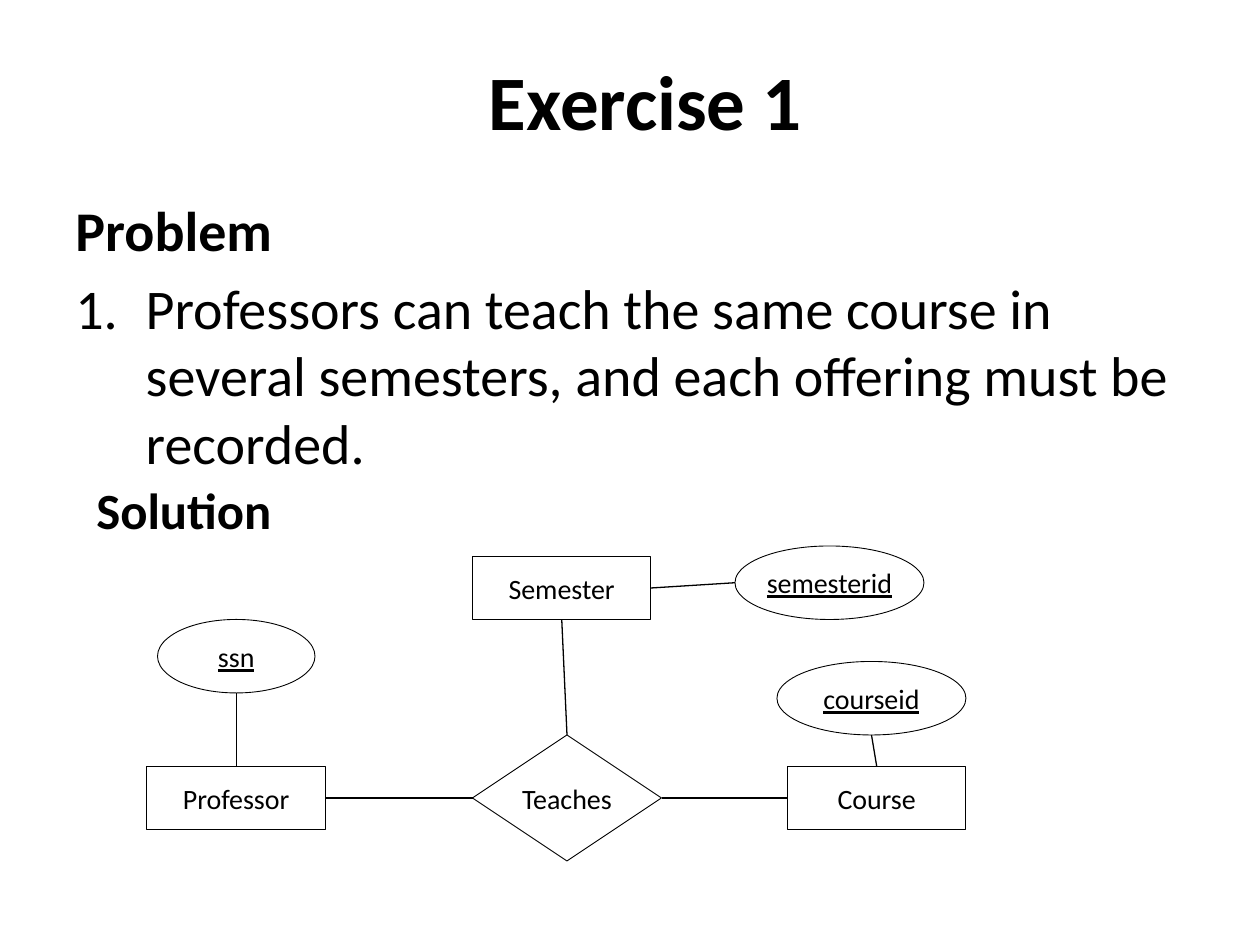
from lxml import etree
from pptx import Presentation
from pptx.dml.color import RGBColor
from pptx.enum.shapes import MSO_CONNECTOR, MSO_SHAPE
from pptx.enum.text import MSO_ANCHOR, PP_ALIGN
from pptx.oxml.ns import qn
from pptx.util import Pt

PX = 7620  # EMU per px, 120 px to the inch
COLORS = {"ink": "000000", "paper": "FFFFFF"}
SIDES = {"top": (0.5, 0), "left": (0, 0.5), "bottom": (0.5, 1), "right": (1, 0.5)}


class SlideBuilder:
    font = "Calibri"

    def __init__(self, slide):
        self.slide = slide

    def color(self, name):
        return RGBColor.from_string(COLORS[name])

    def style(self, para, size, bold=False, underline=False):
        font = para.font
        font.name, font.size = self.font, Pt(size)
        font.bold, font.underline = bold, underline
        font.color.rgb = self.color("ink")

    def text_box(self, left, top, width, height, anchor=MSO_ANCHOR.TOP):
        box = self.slide.shapes.add_textbox(left * PX, top * PX, width * PX, height * PX)
        frame = box.text_frame
        frame.word_wrap = True
        frame.vertical_anchor = anchor
        return frame

    def paragraph(self, para, text, size, bold=False, indent=0, before=0,
                  align=PP_ALIGN.LEFT, numbered=False):
        para.text = text
        para.alignment = align
        para.space_before = Pt(before)
        self.style(para, size, bold)
        properties = para._p.get_or_add_pPr()
        properties.set("marL", str(indent * PX))
        properties.set("indent", str(-indent * PX))
        if numbered:
            number = etree.Element(qn("a:buAutoNum"), type="arabicPeriod")
            properties.find(qn("a:defRPr")).addprevious(number)

    def node(self, kind, text, left, top, width, height, key=False, tight=False):
        shape = self.slide.shapes.add_shape(kind, left * PX, top * PX, width * PX, height * PX)
        shape.shadow.inherit = False
        shape.fill.solid()
        shape.fill.fore_color.rgb = self.color("paper")
        shape.line.color.rgb = self.color("ink")
        shape.line.width = Pt(0.5)
        frame = shape.text_frame
        frame.vertical_anchor = MSO_ANCHOR.MIDDLE
        frame.word_wrap = not tight
        if tight:
            frame.margin_left = frame.margin_right = 0
        para = frame.paragraphs[0]
        para.text = text
        para.alignment = PP_ALIGN.CENTER
        self.style(para, 16, underline=key)
        return shape

    def entity(self, text, left, top):
        return self.node(MSO_SHAPE.RECTANGLE, text, left, top, 170, 60)

    def key_attribute(self, text, left, top, width=180, tight=True):
        return self.node(MSO_SHAPE.OVAL, text, left, top, width, 70, key=True, tight=tight)

    def relationship(self, text, left, top):
        shape = self.node(MSO_SHAPE.DIAMOND, text, left, top, 180, 120, tight=True)
        shape.text_frame.margin_top = shape.text_frame.margin_bottom = 0
        return shape

    def link(self, start, start_side, end, end_side):
        points = []
        for shape, side in ((start, start_side), (end, end_side)):
            across, down = SIDES[side]
            points += [int(shape.left + across * shape.width),
                       int(shape.top + down * shape.height)]
        line = self.slide.shapes.add_connector(MSO_CONNECTOR.STRAIGHT, *points)
        line.line.color.rgb = self.color("ink")
        line.line.width = Pt(0.75)
        etree.SubElement(line._element.spPr, qn("a:effectLst"))


def main():
    deck = Presentation()
    deck.slide_width, deck.slide_height = 1200 * PX, 900 * PX
    page = SlideBuilder(deck.slides.add_slide(deck.slide_layouts[6]))

    # Title
    title = page.text_box(80, 30, 1070, 130, MSO_ANCHOR.MIDDLE)
    page.paragraph(title.paragraphs[0], "Exercise 1", 44, bold=True, align=PP_ALIGN.CENTER)

    # Problem statement
    problem = page.text_box(60, 180, 1080, 360)
    page.paragraph(problem.paragraphs[0], "Problem", 32, bold=True, indent=45, before=6.4)
    page.paragraph(problem.add_paragraph(),
                   "Professors can teach the same course in several semesters, "
                   "and each offering must be recorded.",
                   32, indent=67, before=6.4, numbered=True)

    # Solution heading
    solution = page.text_box(80, 450, 1080, 460)
    page.paragraph(solution.paragraphs[0], "Solution", 29, bold=True, indent=42, before=7)

    # Entities, relationship and key attributes
    professor = page.entity("Professor", 140, 730)
    teaches = page.relationship("Teaches", 450, 700)
    ssn = page.key_attribute("ssn", 150, 590, width=150, tight=False)
    course = page.entity("Course", 750, 730)
    semester = page.entity("Semester", 450, 530)
    semester_id = page.key_attribute("semesterid", 700, 520)
    course_id = page.key_attribute("courseid", 740, 630)

    # Links
    page.link(professor, "top", ssn, "bottom")
    page.link(teaches, "left", professor, "right")
    page.link(course, "left", teaches, "right")
    page.link(semester, "bottom", teaches, "top")
    page.link(semester_id, "left", semester, "right")
    page.link(course_id, "bottom", course, "top")

    deck.save("out.pptx")


if __name__ == "__main__":
    main()
